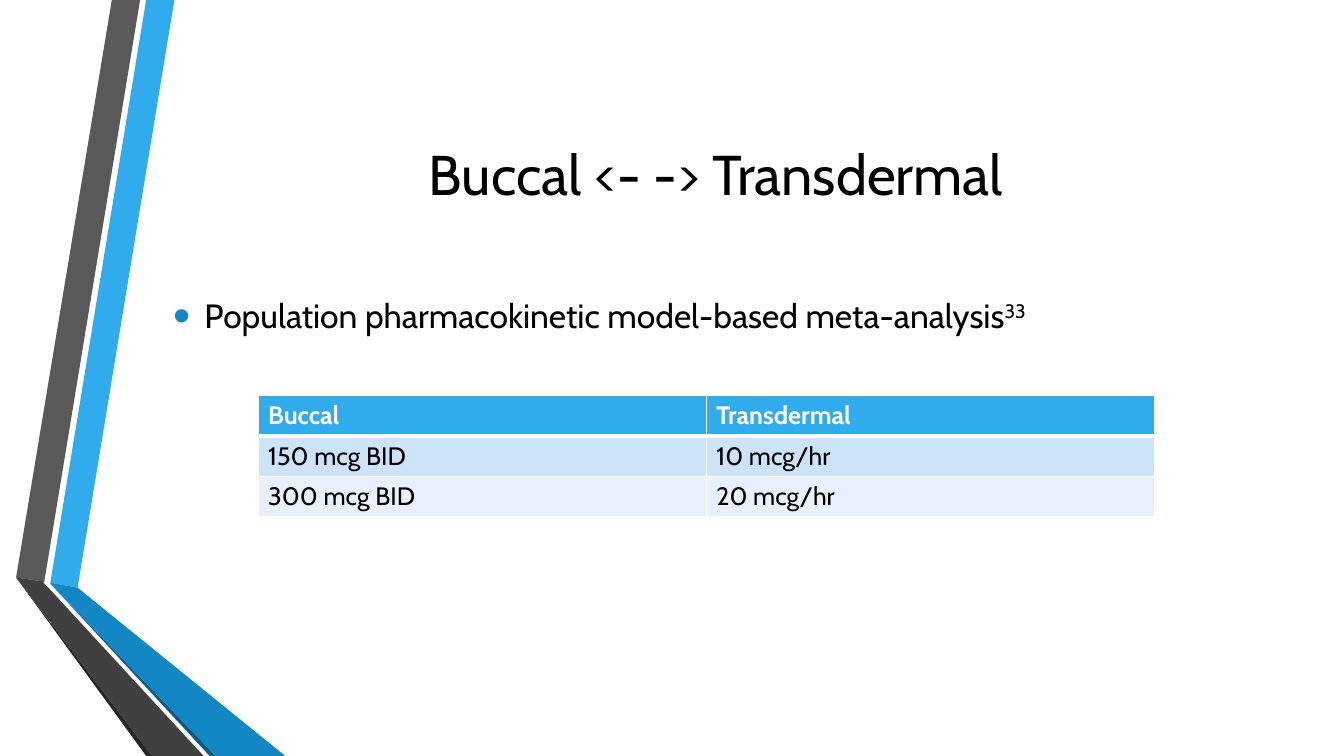
from dataclasses import dataclass

from lxml import etree
from pptx import Presentation
from pptx.dml.color import RGBColor
from pptx.enum.text import MSO_ANCHOR as Anchor, PP_ALIGN as Align
from pptx.oxml.ns import qn
from pptx.util import Inches, Pt


@dataclass(frozen=True)
class Theme:
    font: str = "Cabin"
    title_size: int = 40
    body_size: int = 24
    table_size: int = 18
    ink: str = "000000"
    paper: str = "FFFFFF"
    sky: str = "30ACEC"
    blue: str = "1287C3"
    navy: str = "0C5A82"
    grey: str = "595959"
    charcoal: str = "404040"
    coal: str = "262626"
    bands: tuple = ("CDE3F8", "E8F1FB")


THEME = Theme()

RIBBON_FACES = (
    (THEME.sky, [(0.5, 5.78), (0.77, 5.83), (1.73, 0), (1.45, 0)]),
    (THEME.grey, [(1.39, 0), (1.11, 0), (0.16, 5.73), (0.44, 5.77)]),
    (THEME.coal, [(0.16, 5.73), (1.45, 7.5), (1.51, 7.5)]),
    (THEME.navy, [(0.5, 5.79), (2.08, 7.5), (2.14, 7.5)]),
    (THEME.blue, [(0.5, 5.79), (2.14, 7.5), (2.83, 7.5), (0.77, 5.83), (0.5, 5.78)]),
    (THEME.charcoal, [(2.02, 7.5), (0.48, 5.83), (0.43, 5.78), (0.44, 5.77),
                      (0.16, 5.73), (1.51, 7.5)]),
)

DOSES = (
    ("Buccal", "Transdermal"),
    ("150 mcg BID", "10 mcg/hr"),
    ("300 mcg BID", "20 mcg/hr"),
)


def write(paragraph, text, size, color=THEME.ink, bold=False, align=Align.LEFT, raised=0):
    paragraph.alignment = align
    run = paragraph.add_run()
    run.text = text
    run.font.name = THEME.font
    run.font.size = Pt(size)
    run.font.bold = bold
    run.font.color.rgb = RGBColor.from_string(color)
    if raised:
        run._r.get_or_add_rPr().set("baseline", str(raised * 1000))


def add_bullet(paragraph, color, percent, indent):
    props = paragraph._p.get_or_add_pPr()
    props.set("marL", str(indent))
    props.set("indent", str(-indent))
    bullet_color = etree.SubElement(props, qn("a:buClr"))
    etree.SubElement(bullet_color, qn("a:srgbClr"), val=color)
    etree.SubElement(props, qn("a:buSzPct"), val=str(percent * 1000))
    etree.SubElement(props, qn("a:buFont"), typeface="Arial")
    etree.SubElement(props, qn("a:buChar"), char="•")


def set_borders(cell, color, widths):
    props = cell._tc.get_or_add_tcPr()
    for position, (side, width) in enumerate(widths.items()):
        line = etree.Element(qn(f"a:ln{side}"), w=str(Pt(width)))
        fill = etree.SubElement(line, qn("a:solidFill"))
        etree.SubElement(fill, qn("a:srgbClr"), val=color)
        props.insert(position, line)


def middle_paragraph(slide, box):
    frame = slide.shapes.add_textbox(*box).text_frame
    frame.word_wrap = True
    frame.vertical_anchor = Anchor.MIDDLE
    return frame.paragraphs[0]


def draw_ribbons(slide, left, top):
    for color, points in RIBBON_FACES:
        start, *rest = [(round(x * 100), round(y * 100)) for x, y in points]
        outline = slide.shapes.build_freeform(*start, scale=Inches(0.01))
        outline.add_line_segments(rest, close=True)
        face = outline.convert_to_shape(left, top)
        face.shadow.inherit = False
        face.fill.solid()
        face.fill.fore_color.rgb = RGBColor.from_string(color)
        face.line.fill.background()


def draw_title(slide, box):
    write(middle_paragraph(slide, box), "Buccal <- -> Transdermal",
          THEME.title_size, align=Align.CENTER)


def draw_finding(slide, box):
    finding = middle_paragraph(slide, box)
    finding.space_before = Pt(0.2 * THEME.body_size)
    finding.space_after = Pt(6)
    add_bullet(finding, THEME.blue, 145, Inches(0.31))
    write(finding, "Population pharmacokinetic model-based meta-analysis", THEME.body_size)
    write(finding, "33", THEME.body_size, raised=30)


def draw_doses(slide, box):
    doses = slide.shapes.add_table(len(DOSES), len(DOSES[0]), *box).table
    for r, row in enumerate(DOSES):
        header = r == 0
        fill = THEME.sky if header else THEME.bands[(r - 1) % 2]
        widths = {"L": 1, "R": 1, "T": 3 if r == 1 else 1, "B": 3 if header else 1}
        for c, dose in enumerate(row):
            cell = doses.cell(r, c)
            cell.fill.solid()
            cell.fill.fore_color.rgb = RGBColor.from_string(fill)
            set_borders(cell, THEME.paper, widths)
            write(cell.text_frame.paragraphs[0], dose, THEME.table_size,
                  color=THEME.paper if header else THEME.ink, bold=header)


def main():
    deck = Presentation()
    deck.slide_width, deck.slide_height = Inches(13.33), Inches(7.5)
    slide = deck.slides.add_slide(deck.slide_layouts[6])
    slide.background.fill.solid()
    slide.background.fill.fore_color.rgb = RGBColor.from_string(THEME.paper)
    left, width = Inches(1.62), Inches(10.96)
    draw_ribbons(slide, 0, 0)
    draw_title(slide, (left, Inches(0.76), width, Inches(1.92)))
    draw_finding(slide, (left, Inches(1.42), width, Inches(3.42)))
    draw_doses(slide, (Inches(2.56), Inches(3.92), Inches(8.89), Inches(1.21)))
    deck.save("out.pptx")


if __name__ == "__main__":
    main()
